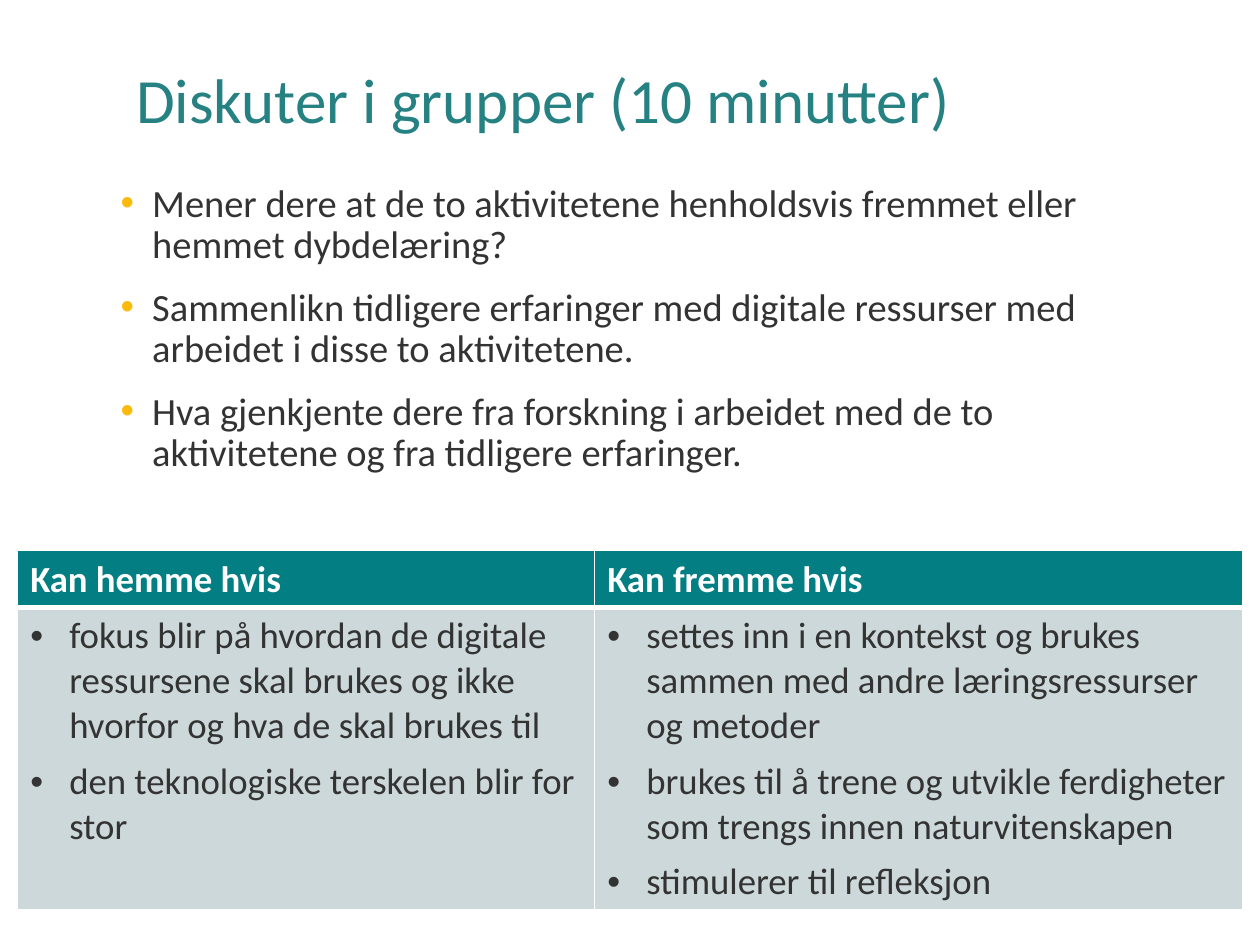
"""Build the group discussion slide with three questions and a comparison table."""
import pptx
import pptx.dml.color
import pptx.enum.text
import pptx.oxml.ns
import pptx.util
from lxml import etree

Inches = pptx.util.Inches
Pt = pptx.util.Pt
COLOURS = {
    "title": "268183",
    "text": "333333",
    "bullet": "FDB90C",
    "header": "037F83",
    "body": "CCD8D9",
    "white": "FFFFFF",
}


def style(paragraph, size, colour, bold=False):
    paragraph.alignment = pptx.enum.text.PP_ALIGN.LEFT
    paragraph.font.name = "Calibri"
    paragraph.font.size = Pt(size)
    paragraph.font.bold = bold
    paragraph.font.color.rgb = pptx.dml.color.RGBColor.from_string(COLOURS[colour])


def add_bullets(frame, texts, indent, gap, size, bullet_colour):
    for index, text in enumerate(texts):
        para = frame.paragraphs[0] if index == 0 else frame.add_paragraph()
        para.text = text
        properties = para._p.get_or_add_pPr()
        properties.set("marL", str(Inches(indent)))
        properties.set("indent", str(Inches(-indent)))
        colour = etree.SubElement(properties, pptx.oxml.ns.qn("a:buClr"))
        etree.SubElement(colour, pptx.oxml.ns.qn("a:srgbClr"), val=COLOURS[bullet_colour])
        etree.SubElement(properties, pptx.oxml.ns.qn("a:buFont"), typeface="Arial")
        etree.SubElement(properties, pptx.oxml.ns.qn("a:buChar"), char="•")
        if index:
            para.space_before = Pt(gap)
        style(para, size, "text")


deck = pptx.Presentation()
deck.slide_width, deck.slide_height = Inches(10), Inches(7.5)
page = deck.slides.add_slide(deck.slide_layouts[5])

title = page.shapes.title
title.left, title.top = Inches(0.98), Inches(0.4)
title.width, title.height = Inches(8.29), Inches(0.84)
title.text_frame.text = "Diskuter i grupper (10 minutter)"
title.text_frame.auto_size = pptx.enum.text.MSO_AUTO_SIZE.NONE
title.text_frame.vertical_anchor = pptx.enum.text.MSO_ANCHOR.MIDDLE
title.text_frame.paragraphs[0].line_spacing = 0.9
style(title.text_frame.paragraphs[0], 36, "title")

questions = [
    "Mener dere at de to aktivitetene henholdsvis fremmet eller hemmet dybdelæring?",
    "Sammenlikn tidligere erfaringer med digitale ressurser med arbeidet i disse to aktivitetene.",
    "Hva gjenkjente dere fra forskning i arbeidet med de to aktivitetene og fra tidligere erfaringer.",
]
question_box = page.shapes.add_textbox(Inches(0.86), Inches(1.41), Inches(8.29), Inches(4.16))
question_box.text_frame.word_wrap = True
add_bullets(question_box.text_frame, questions, 0.25, 12, 22, "bullet")
for para in question_box.text_frame.paragraphs:
    para.line_spacing = 0.9

columns = [
    ("Kan hemme hvis", 4.58, [
        "fokus blir på hvordan de digitale ressursene skal brukes og ikke hvorfor og hva de skal brukes til",
        "den teknologiske terskelen blir for stor",
    ]),
    ("Kan fremme hvis", 5.14, [
        "settes inn i en kontekst og brukes sammen med andre læringsressurser og metoder",
        "brukes til å trene og utvikle ferdigheter som trengs innen naturvitenskapen",
        "stimulerer til refleksjon",
    ]),
]
table = page.shapes.add_table(
    2, 2, Inches(0.14), Inches(4.37), Inches(9.72), Inches(2.85)
).table
table.rows[0].height, table.rows[1].height = Inches(0.45), Inches(2.4)

for column, (heading, width, points) in enumerate(columns):
    table.columns[column].width = Inches(width)
    header, body = table.cell(0, column), table.cell(1, column)
    header.text = heading
    style(header.text_frame.paragraphs[0], 21, "white", bold=True)
    add_bullets(body.text_frame, points, 0.31, 6, 21, "text")
    for cell, fill, edges in (
        (header, "header", {"lnL": 1, "lnR": 1, "lnT": 1, "lnB": 3}),
        (body, "body", {"lnL": 1, "lnR": 1, "lnT": 3, "lnB": 1}),
    ):
        properties = cell._tc.get_or_add_tcPr()
        for edge, weight in edges.items():
            line = etree.SubElement(properties, pptx.oxml.ns.qn(f"a:{edge}"), w=str(Pt(weight)))
            solid = etree.SubElement(line, pptx.oxml.ns.qn("a:solidFill"))
            etree.SubElement(solid, pptx.oxml.ns.qn("a:srgbClr"), val=COLOURS["white"])
        cell.fill.solid()
        cell.fill.fore_color.rgb = pptx.dml.color.RGBColor.from_string(COLOURS[fill])

deck.save("out.pptx")
